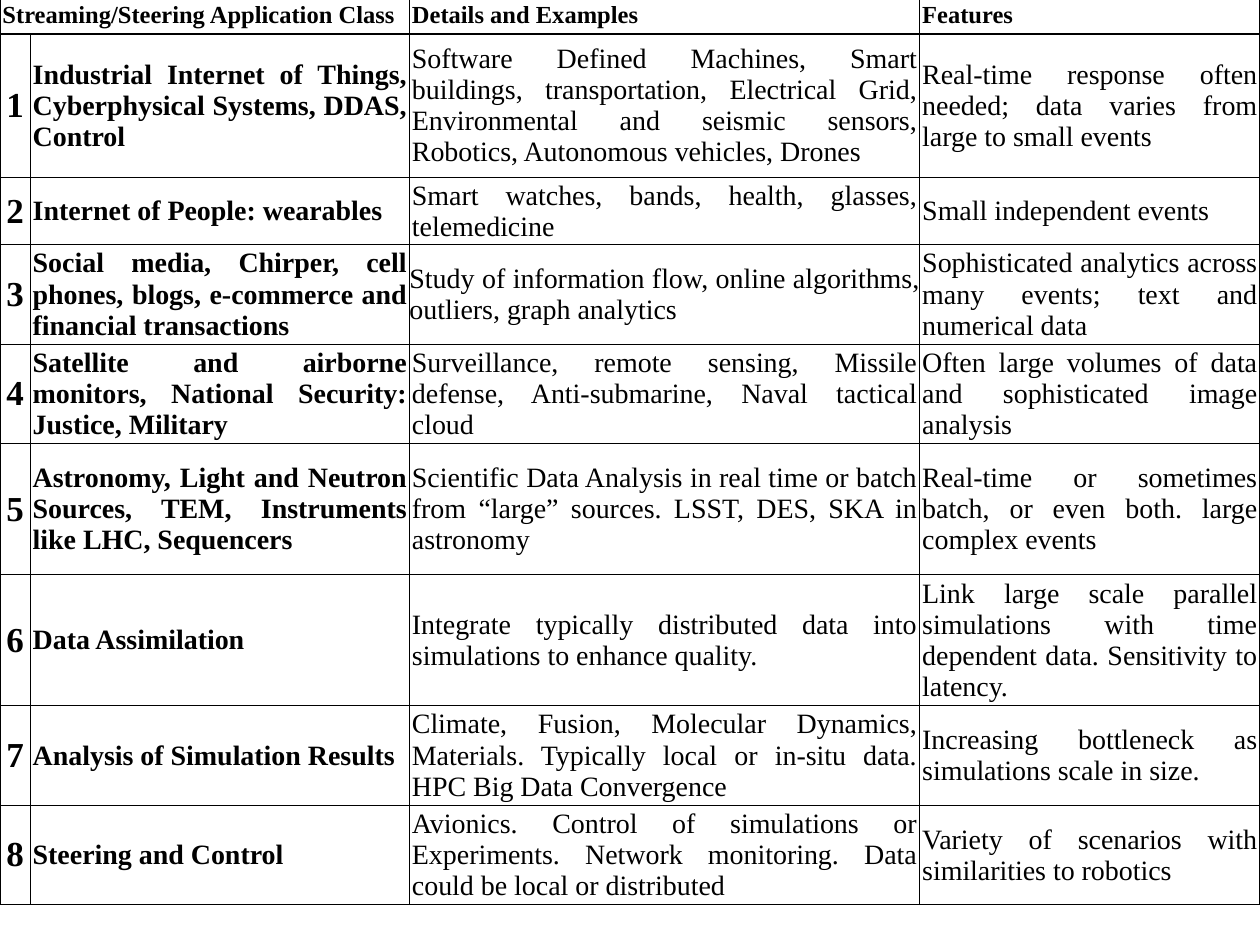
import dataclasses
import typing

import lxml.etree
import pptx
import pptx.dml.color
import pptx.enum.text
import pptx.oxml.ns
import pptx.util

WIDTH = 10
HEIGHT = 7.5
TOP = -0.03
COLUMN_PERCENTS = (2.4, 30.1, 40.5, 27)
ROW_PERCENTS = (4, 15.2, 7.07, 10.53, 10.53, 13.87, 13.87, 10.53, 10.53)
INSET = 0.02
FONT = "Times New Roman"
BLACK = "000000"
WHITE = "FFFFFF"
ALIGN = pptx.enum.text.PP_ALIGN


@dataclasses.dataclass(frozen=True)
class Application:
    name: str
    details: str
    features: str
    details_inset: float = INSET


HEADERS = {
    0: "Streaming/Steering Application Class",
    2: "Details and Examples",
    3: "Features",
}

APPLICATIONS = (
    Application(
        "Industrial Internet of Things, Cyberphysical Systems, DDAS, Control",
        "Software Defined Machines, Smart buildings, transportation, Electrical Grid, "
        "Environmental and seismic sensors, Robotics, Autonomous vehicles, Drones",
        "Real-time response often needed; data varies from large to small events",
    ),
    Application(
        "Internet of People: wearables",
        "Smart watches, bands, health, glasses, telemedicine",
        "Small independent events",
    ),
    Application(
        "Social media, Chirper, cell phones, blogs, e-commerce and financial transactions",
        "Study of information flow, online algorithms, outliers, graph analytics",
        "Sophisticated analytics across many events; text and numerical data",
        details_inset=0,
    ),
    Application(
        "Satellite and airborne monitors, National Security: Justice, Military",
        "Surveillance, remote sensing, Missile defense, Anti-submarine, Naval tactical cloud",
        "Often large volumes of data and sophisticated image analysis",
    ),
    Application(
        "Astronomy, Light and Neutron Sources, TEM, Instruments like LHC, Sequencers",
        "Scientific Data Analysis in real time or batch from “large” sources. "
        "LSST, DES, SKA in astronomy",
        "Real-time or sometimes batch, or even both. large complex events",
    ),
    Application(
        "Data Assimilation",
        "Integrate typically distributed data into simulations to enhance quality.",
        "Link large scale parallel simulations with time dependent data. "
        "Sensitivity to latency.",
    ),
    Application(
        "Analysis of Simulation Results",
        "Climate, Fusion, Molecular Dynamics, Materials. Typically local or in-situ data. "
        "HPC Big Data Convergence",
        "Increasing bottleneck as simulations scale in size.",
    ),
    Application(
        "Steering and Control",
        "Avionics. Control of simulations or Experiments. Network monitoring. "
        "Data could be local or distributed",
        "Variety of scenarios with similarities to robotics",
    ),
)


def color(value: str) -> pptx.dml.color.RGBColor:
    return pptx.dml.color.RGBColor.from_string(value)


def across(percent: float) -> int:
    return pptx.util.Inches(WIDTH * percent / 100)


def down(percent: float) -> int:
    return pptx.util.Inches(HEIGHT * percent / 100)


def style_cell(cell: typing.Any) -> None:
    tc_pr = cell._tc.get_or_add_tcPr()
    qn = pptx.oxml.ns.qn
    for side in ("lnL", "lnR", "lnT", "lnB"):
        line = lxml.etree.SubElement(tc_pr, qn(f"a:{side}"), w=str(pptx.util.Pt(0.75)))
        fill = lxml.etree.SubElement(line, qn("a:solidFill"))
        lxml.etree.SubElement(fill, qn("a:srgbClr"), val=BLACK)
    cell.fill.solid()
    cell.fill.fore_color.rgb = color(WHITE)
    cell.vertical_anchor = pptx.enum.text.MSO_ANCHOR.MIDDLE


def write(
    cell: typing.Any,
    text: str,
    *,
    size: float = 16,
    bold: bool = False,
    align: typing.Any = ALIGN.JUSTIFY,
    inset: float = INSET,
) -> None:
    for side in ("left", "right", "top", "bottom"):
        setattr(cell, f"margin_{side}", pptx.util.Inches(inset))
    p = cell.text_frame.paragraphs[0]
    p.alignment = align
    r = p.add_run()
    r.text = text
    r.font.name = FONT
    r.font.size = pptx.util.Pt(size)
    r.font.bold = bold
    r.font.color.rgb = color(BLACK)


def write_application(table: typing.Any, number: int, app: Application) -> None:
    write(table.cell(number, 0), str(number), size=20, bold=True, align=ALIGN.CENTER)
    write(table.cell(number, 1), app.name, bold=True)
    write(table.cell(number, 2), app.details, inset=app.details_inset)
    write(table.cell(number, 3), app.features)


def add_application_table(s: typing.Any) -> None:
    frame = s.shapes.add_table(
        len(ROW_PERCENTS), len(COLUMN_PERCENTS),
        0, pptx.util.Inches(TOP), across(100), down(sum(ROW_PERCENTS)),
    )
    table = frame.table
    table.first_row = False
    table.horz_banding = False
    for column, percent in zip(table.columns, COLUMN_PERCENTS):
        column.width = across(percent)
    for row, percent in zip(table.rows, ROW_PERCENTS):
        row.height = down(percent)
    for cell in table.iter_cells():
        style_cell(cell)
    table.cell(0, 0).merge(table.cell(0, 1))
    for column, text in HEADERS.items():
        write(table.cell(0, column), text, size=14, bold=True)
    for number, app in enumerate(APPLICATIONS, 1):
        write_application(table, number, app)


def main() -> None:
    prs = pptx.Presentation()
    prs.slide_width = pptx.util.Inches(WIDTH)
    prs.slide_height = pptx.util.Inches(HEIGHT)
    s = prs.slides.add_slide(prs.slide_layouts[6])
    add_application_table(s)
    prs.save("out.pptx")


if __name__ == "__main__":
    main()
